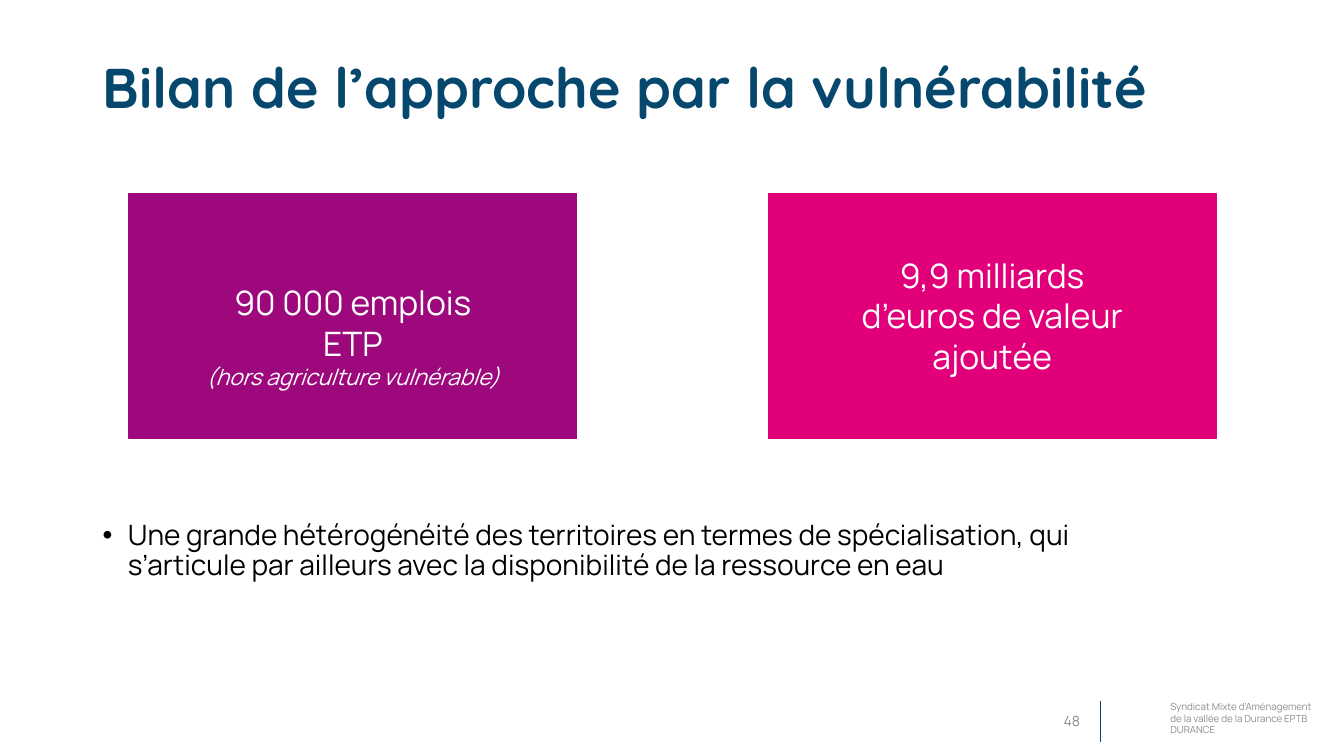
from lxml import etree
from pptx import Presentation
from pptx.dml.color import RGBColor
from pptx.enum import dml, shapes, text
from pptx.oxml import ns
from pptx.util import Inches, Pt

NAVY = RGBColor(0x06, 0x47, 0x6D)
PURPLE = RGBColor(0x9E, 0x08, 0x7D)
PINK = RGBColor(0xE2, 0x00, 0x7A)
GREY = RGBColor(0x8C, 0x8C, 0x8C)
WHITE = RGBColor(0xFF, 0xFF, 0xFF)
BLACK = RGBColor(0x00, 0x00, 0x00)
LEFT, CENTER, RIGHT = text.PP_ALIGN.LEFT, text.PP_ALIGN.CENTER, text.PP_ALIGN.RIGHT
TOP, MIDDLE = text.MSO_ANCHOR.TOP, text.MSO_ANCHOR.MIDDLE

presentation = Presentation()
presentation.slide_width = Inches(13.33)
presentation.slide_height = Inches(7.5)
slide = presentation.slides.add_slide(presentation.slide_layouts[6])


def style(paragraph, size, color, align=LEFT, font="Manrope"):
    paragraph.alignment = align
    paragraph.font.size = Pt(size)
    paragraph.font.name = font
    paragraph.font.color.rgb = color


def add_text(left, top, width, height, content, anchor=TOP):
    box = slide.shapes.add_textbox(Inches(left), Inches(top), Inches(width), Inches(height))
    frame = box.text_frame
    frame.word_wrap = True
    frame.vertical_anchor = anchor
    frame.text = content
    return frame.paragraphs


# Title
title = add_text(0.92, 0, 11.42, 1.8, "Bilan de l’approche par la vulnérabilité", MIDDLE)[0]
style(title, 40, NAVY, font="Quicksand")
title.font.bold = True
title.line_spacing = 0.9

# Key figures: coloured panels with centred text
PANEL_WIDTH = 4.44
FIGURE_WIDTH = 3.12
figures = [
    (1.28, PURPLE, 2.75, 1.1, "90 000 emplois ETP\n(hors agriculture vulnérable)"),
    (7.62, PINK, 2.48, 1.31, "9,9 milliards d’euros de valeur ajoutée"),
]
for left, color, text_top, text_height, content in figures:
    panel = slide.shapes.add_shape(shapes.MSO_SHAPE.RECTANGLE, Inches(left), Inches(1.92),
                                   Inches(PANEL_WIDTH), Inches(2.43))
    panel.shadow.inherit = False
    panel.fill.solid()
    panel.fill.fore_color.rgb = color
    panel.line.color.rgb = color
    panel.line.width = Pt(1)
    text_left = left + (PANEL_WIDTH - FIGURE_WIDTH) / 2
    figure, *notes = add_text(text_left, text_top, FIGURE_WIDTH, text_height, content)
    style(figure, 24, WHITE, CENTER)
    for note in notes:
        style(note, 16, WHITE, CENTER)
        note.font.italic = True

# Bulleted conclusion
conclusion = add_text(
    0.92, 5.12, 10.96, 0.85,
    "Une grande hétérogénéité des territoires en termes de spécialisation, "
    "qui s’articule par ailleurs avec la disponibilité de la ressource en eau")[0]
conclusion.line_spacing = 0.9
properties = conclusion._p.get_or_add_pPr()
properties.set("marL", str(Inches(0.25)))
properties.set("indent", str(-Inches(0.25)))
etree.SubElement(properties, ns.qn("a:buFont")).set("typeface", "Arial")
etree.SubElement(properties, ns.qn("a:buChar")).set("char", "•")
style(conclusion, 20, BLACK)

# Footer: page number, divider, organisation
page_number = add_text(7.81, 6.95, 3, 0.4, "48", MIDDLE)[0]
style(page_number, 10, GREY, RIGHT)
divider = slide.shapes.add_connector(shapes.MSO_CONNECTOR.STRAIGHT, Inches(10.91), Inches(7.35),
                                     Inches(10.91), Inches(6.95))
divider.line.color.rgb = NAVY
divider.line.width = Pt(0.25)
divider.line.dash_style = dml.MSO_LINE.ROUND_DOT
etree.SubElement(divider._element.spPr, ns.qn("a:effectLst"))
organisation = add_text(11.51, 6.86, 1.63, 0.53,
                        "Syndicat Mixte d’Aménagement de la vallée de la Durance EPTB DURANCE",
                        MIDDLE)[0]
style(organisation, 7, GREY)

presentation.save("out.pptx")
